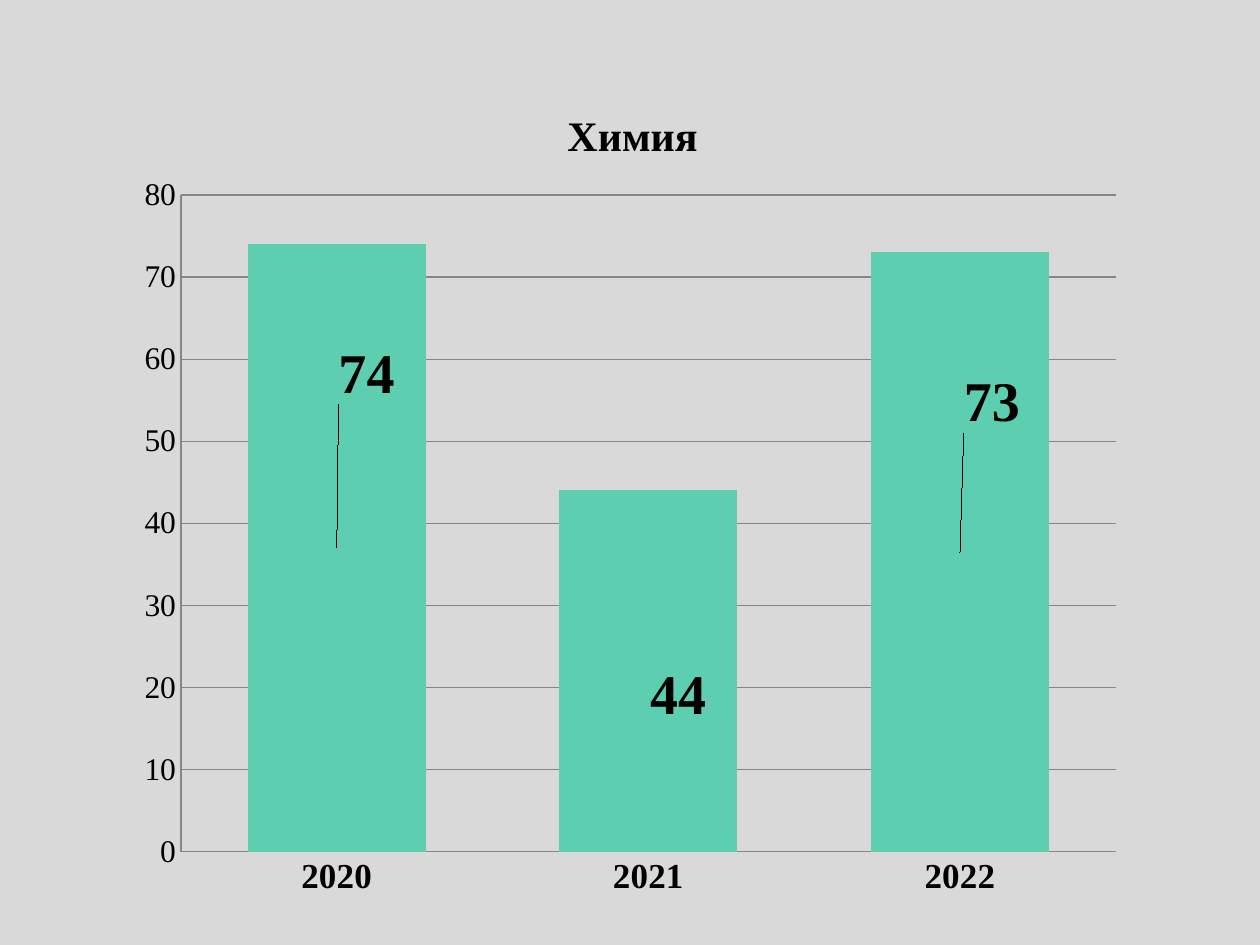
import pptx
import pptx.chart.data
import pptx.dml.color
import pptx.enum.chart
import pptx.oxml
import pptx.oxml.ns
import pptx.util

PX = 914400 // 126
BACKGROUND = pptx.dml.color.RGBColor(0xD9, 0xD9, 0xD9)
BAR = pptx.dml.color.RGBColor(0x5D, 0xCE, 0xAF)
GRID = pptx.dml.color.RGBColor(0x86, 0x86, 0x86)
BLACK = pptx.dml.color.RGBColor(0, 0, 0)
FONT = "Times New Roman"

YEARS = ["2020", "2021", "2022"]
SCORES = [74, 44, 73]
LABEL_SHIFTS = [(30, -174), (30, 24), (32, -150)]
CHART_BOX = (123, 66, 1012, 848)
PLOT_BOX = (58, 129, 935, 657)
TITLE_SPOT = (437, 35)


def format_font(font, size, bold=False):
    font.name = FONT
    font.size = pptx.util.Pt(size)
    font.bold = bold
    font.color.rgb = BLACK


def write_text(frame, text, **style):
    span = frame.paragraphs[0].add_run()
    span.text = text
    format_font(span.font, **style)


def set_layout(parent, index, lengths, modes):
    """Give a chart part a manual layout, from px to shares of the chart."""
    for old in parent.findall(pptx.oxml.ns.qn("c:layout")):
        parent.remove(old)
    shares = zip("xywh", lengths, CHART_BOX[2:] * 2)
    tags = modes + "".join(
        f'<c:{name} val="{length / whole:.4f}"/>' for name, length, whole in shares)
    parent.insert(index, pptx.oxml.parse_xml(
        f'<c:layout {pptx.oxml.ns.nsdecls("c")}><c:manualLayout>{tags}'
        '</c:manualLayout></c:layout>'))


EDGE = '<c:xMode val="edge"/><c:yMode val="edge"/>'


class Slide:
    def __init__(self, deck):
        self.page = deck.slides.add_slide(deck.slide_layouts[6])
        self.page.background.fill.solid()
        self.page.background.fill.fore_color.rgb = BACKGROUND

    def add_column_chart(self, title, categories, values):
        data = pptx.chart.data.CategoryChartData()
        data.categories = categories
        data.add_series("Series 1", values)
        chart = self.page.shapes.add_chart(
            pptx.enum.chart.XL_CHART_TYPE.COLUMN_STACKED,
            *(length * PX for length in CHART_BOX), data).chart
        format_font(chart.font, 18)
        chart.has_legend = False
        chart.has_title = True
        write_text(chart.chart_title.text_frame, title, size=24, bold=True)
        set_layout(chart.element.xpath("c:chart/c:title")[0], 1, TITLE_SPOT, EDGE)
        set_layout(chart.element.xpath("c:chart/c:plotArea")[0], 0, PLOT_BOX,
                   '<c:layoutTarget val="inner"/>' + EDGE)
        self.format_axes(chart)
        self.format_bars(chart)

    def format_axes(self, chart):
        for axis, size, bold in ((chart.category_axis, 20, True),
                                 (chart.value_axis, 18, False)):
            axis.major_tick_mark = pptx.enum.chart.XL_TICK_MARK.NONE
            axis.minor_tick_mark = pptx.enum.chart.XL_TICK_MARK.NONE
            axis.format.line.color.rgb = GRID
            format_font(axis.tick_labels.font, size, bold)
        scale = chart.value_axis
        scale.minimum_scale, scale.maximum_scale, scale.major_unit = 0, 80, 10
        scale.has_major_gridlines = True
        scale.major_gridlines.format.line.color.rgb = GRID

    def format_bars(self, chart):
        plot = chart.plots[0]
        plot.gap_width, plot.overlap = 75, 100
        plot.vary_by_categories = False
        series = plot.series[0]
        series.format.fill.solid()
        series.format.fill.fore_color.rgb = BAR
        series.data_labels.show_value = True
        format_font(series.data_labels.font, 32, True)
        for index, shift in enumerate(LABEL_SHIFTS):
            format_font(series.points[index].data_label.font, 32, True)
            label = chart.element.xpath(f".//c:dLbl[c:idx/@val='{index}']")[0]
            set_layout(label, 1, shift, "")


def main():
    deck = pptx.Presentation()
    deck.slide_width = pptx.util.Inches(10)
    deck.slide_height = pptx.util.Inches(7.5)
    Slide(deck).add_column_chart("Химия ", YEARS, SCORES)
    deck.save("out.pptx")


if __name__ == "__main__":
    main()
